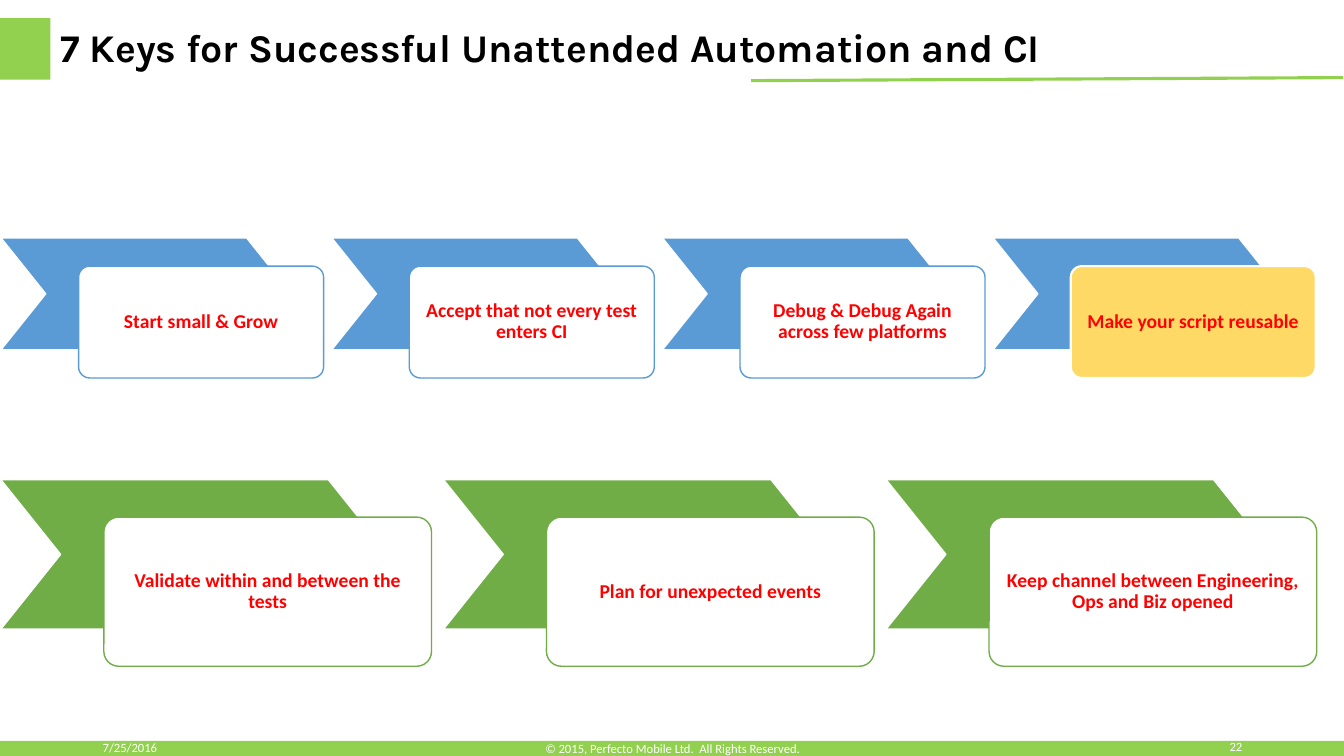
from lxml.etree import SubElement
from pptx import Presentation
from pptx.dml.color import RGBColor
from pptx.enum.shapes import MSO_CONNECTOR as Connector, MSO_SHAPE as Shape
from pptx.enum.text import MSO_ANCHOR as Anchor, PP_ALIGN as Align
from pptx.oxml.ns import qn
from pptx.util import Inches, Pt

LIME = RGBColor(0x92, 0xD0, 0x50)
BLUE = RGBColor(0x5B, 0x9B, 0xD5)
GREEN = RGBColor(0x70, 0xAD, 0x47)
GOLD = RGBColor(0xFF, 0xD9, 0x66)
RED = RGBColor(0xFF, 0x00, 0x00)
BLACK = RGBColor(0x00, 0x00, 0x00)
WHITE = RGBColor(0xFF, 0xFF, 0xFF)


def write(frame, text, *, size, color, font="Calibri", bold=False,
          align=Align.LEFT, spacing=1.0):
    """Put one formatted, vertically centred paragraph in a text frame."""
    frame.word_wrap = True
    frame.vertical_anchor = Anchor.MIDDLE
    paragraph = frame.paragraphs[0]
    paragraph.alignment = align
    paragraph.line_spacing = spacing
    run = paragraph.add_run()
    run.text = text
    run.font.name = font
    run.font.size = Pt(size)
    run.font.bold = bold
    run.font.color.rgb = color


class KeysSlide:
    """Hold the current slide and the style of its elements."""

    chevron_point = 0.4
    card_corner = 0.1
    card_inset = Inches(0.11)

    def __init__(self, slide):
        """Keep the slide to draw on."""
        self.slide = slide

    def block(self, kind, left, top, width, height, fill, line=None, weight=1):
        """Add a filled preset shape, outlined when a line colour is given."""
        block = self.slide.shapes.add_shape(
            kind, Inches(left), Inches(top), Inches(width), Inches(height))
        block.shadow.inherit = False
        block.fill.solid()
        block.fill.fore_color.rgb = fill
        if line is None:
            block.line.fill.background()
        else:
            block.line.color.rgb = line
            block.line.width = Pt(weight)
        return block

    def rule(self, start, end, color, weight):
        """Add a straight line between two points."""
        rule = self.slide.shapes.add_connector(
            Connector.STRAIGHT, *(Inches(length) for length in start + end))
        rule.line.color.rgb = color
        rule.line.width = Pt(weight)
        SubElement(rule._element.spPr, qn("a:effectLst"))

    def label(self, text, left, top, width, height, **style):
        """Add a text box."""
        box = self.slide.shapes.add_textbox(
            Inches(left), Inches(top), Inches(width), Inches(height))
        write(box.text_frame, text, **style)

    def card(self, text, left, top, width, height, fill, line, weight):
        """Add a rounded card with a centred key."""
        card = self.block(Shape.ROUNDED_RECTANGLE, left, top, width, height,
                          fill, line, weight)
        card.adjustments[0] = self.card_corner
        frame = card.text_frame
        frame.margin_left = frame.margin_right = self.card_inset
        frame.margin_top = frame.margin_bottom = self.card_inset
        write(frame, text, size=14, color=RED, bold=True,
              align=Align.CENTER, spacing=0.9)

    def key_row(self, keys, top, pitch, height, chevron_width, card_width,
                shift, drop, color, highlight=None):
        """Add a row of chevrons, each overlapped by its card."""
        for index, key in enumerate(keys):
            left = 0.01 + index * pitch
            chevron = self.block(Shape.CHEVRON, left, top, chevron_width,
                                 height, color, WHITE)
            chevron.adjustments[0] = self.chevron_point
            look = (GOLD, WHITE, 1.5) if key == highlight else (WHITE, color, 1)
            self.card(key, left + shift, top + drop, card_width, height, *look)


def main():
    """Build the slide and save it."""
    deck = Presentation()
    deck.slide_width, deck.slide_height = Inches(13.33), Inches(7.5)
    page = KeysSlide(deck.slides.add_slide(deck.slide_layouts[6]))

    page.block(Shape.RECTANGLE, 0, 0.18, 0.5, 0.61, LIME)
    page.rule((7.45, 0.8), (13.32, 0.77), LIME, 2.25)
    page.block(Shape.RECTANGLE, -0.03, 7.35, 13.36, 0.17, LIME)
    page.label("7 Keys for Successful Unattended Automation and CI",
               0.5, 0.06, 10.39, 0.87, size=28, color=BLACK, font="Karla",
               bold=True, spacing=0.9)

    footer = {"size": 9, "color": WHITE}
    page.label("7/25/2016", 0.92, 7.26, 3, 0.31, **footer)
    page.label("22", 9.42, 7.27, 3, 0.27, align=Align.RIGHT, **footer)
    page.label("© 2015, Perfecto Mobile Ltd.  All Rights Reserved.",
               4.42, 7.27, 4.5, 0.31, align=Align.CENTER, **footer)

    reusable = "Make your script reusable"
    page.key_row(
        ["Start small & Grow", "Accept that not every test enters CI",
         "Debug & Debug Again across few platforms", reusable],
        top=2.36, pitch=3.28, height=1.11, chevron_width=2.88,
        card_width=2.43, shift=0.77, drop=0.28, color=BLUE,
        highlight=reusable)
    page.key_row(
        ["Validate within and between the tests",
         "Plan for unexpected events",
         "Keep channel between Engineering, Ops and Biz opened"],
        top=4.76, pitch=4.39, height=1.48, chevron_width=3.84,
        card_width=3.25, shift=1.02, drop=0.37, color=GREEN)

    deck.save("out.pptx")


if __name__ == "__main__":
    main()
